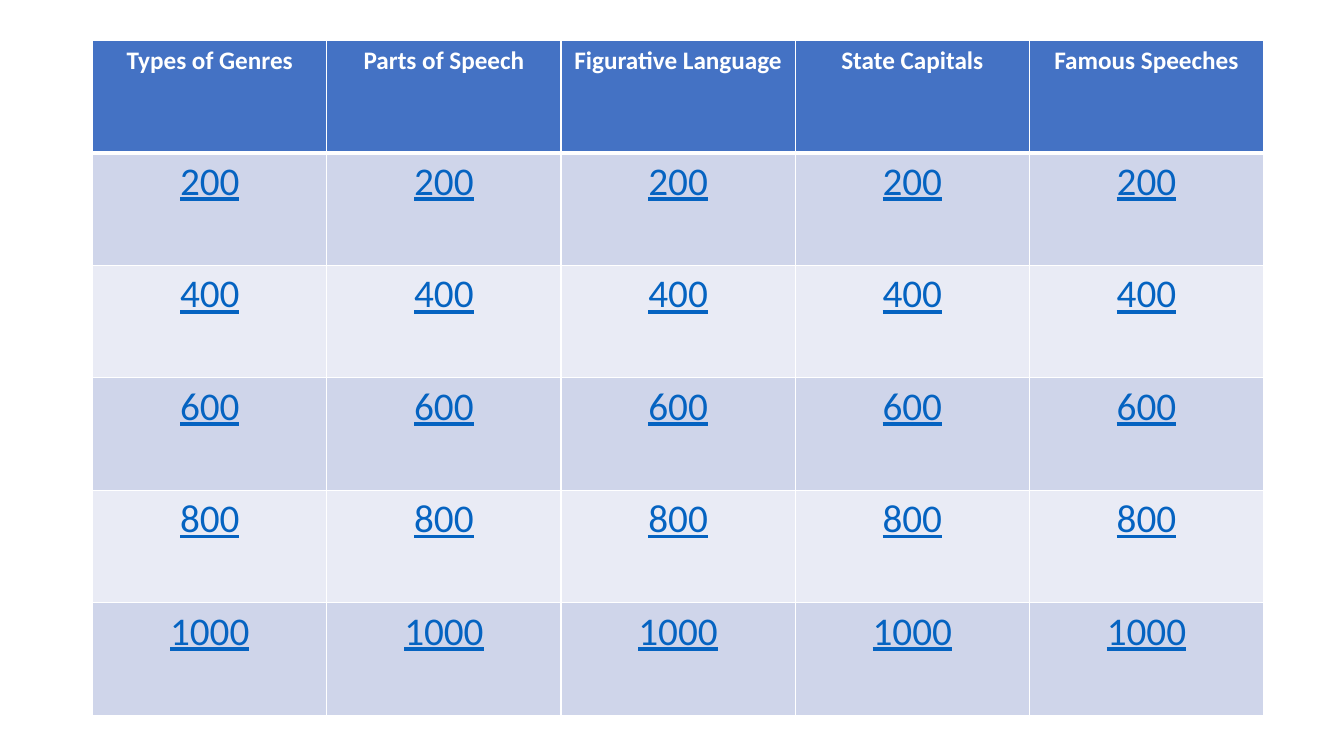
from lxml import etree
from pptx import Presentation
from pptx.dml.color import RGBColor
from pptx.enum.text import PP_ALIGN
from pptx.oxml.ns import qn
from pptx.util import Pt

CENTER = PP_ALIGN.CENTER
WHITE = RGBColor(0xFF, 0xFF, 0xFF)
HEADER_BLUE = RGBColor(0x44, 0x72, 0xC4)
LINK_BLUE = RGBColor(0x05, 0x63, 0xC1)
BANDS = [RGBColor(0xE9, 0xEB, 0xF5), RGBColor(0xCF, 0xD5, 0xEA)]

CATEGORIES = ["Types of Genres", "Parts of Speech", "Figurative Language",
              "State Capitals", "Famous Speeches"]
POINTS = range(200, 1001, 200)


def set_borders(cell, top, bottom):
    tc_pr = cell._tc.get_or_add_tcPr()
    for side, width in (("L", 1), ("R", 1), ("T", top), ("B", bottom)):
        ln = etree.SubElement(tc_pr, qn(f"a:ln{side}"), w=str(Pt(width)))
        fill = etree.SubElement(ln, qn("a:solidFill"))
        etree.SubElement(fill, qn("a:srgbClr"), val=str(WHITE))


def fill_cell(cell, text, row):
    header = row == 0
    set_borders(cell, top=3 if row == 1 else 1, bottom=3 if header else 1)
    cell.fill.solid()
    cell.fill.fore_color.rgb = HEADER_BLUE if header else BANDS[row % 2]
    cell.text_frame.text = text
    p = cell.text_frame.paragraphs[0]
    p.alignment = CENTER
    font = p.runs[0].font
    font.name = "Calibri"
    font.size = Pt(18 if header else 28)
    font.bold = header
    font.underline = not header
    font.color.rgb = WHITE if header else LINK_BLUE


def add_game_board(s, left, top, width, height):
    rows = [CATEGORIES] + [[str(n)] * len(CATEGORIES) for n in POINTS]
    table = s.shapes.add_table(len(rows), len(CATEGORIES), Pt(left), Pt(top),
                               Pt(width), Pt(height)).table
    for column in table.columns:
        column.width = Pt(width / len(CATEGORIES))
    for i, texts in enumerate(rows):
        table.rows[i].height = Pt(height / len(rows))
        for j, text in enumerate(texts):
            fill_cell(table.cell(i, j), text, i)


def main():
    prs = Presentation()
    prs.slide_width, prs.slide_height = Pt(960), Pt(540)
    s = prs.slides.add_slide(prs.slide_layouts[6])
    add_game_board(s, 66.2, 29, 836.5, 482)
    prs.save("out.pptx")


if __name__ == "__main__":
    main()
